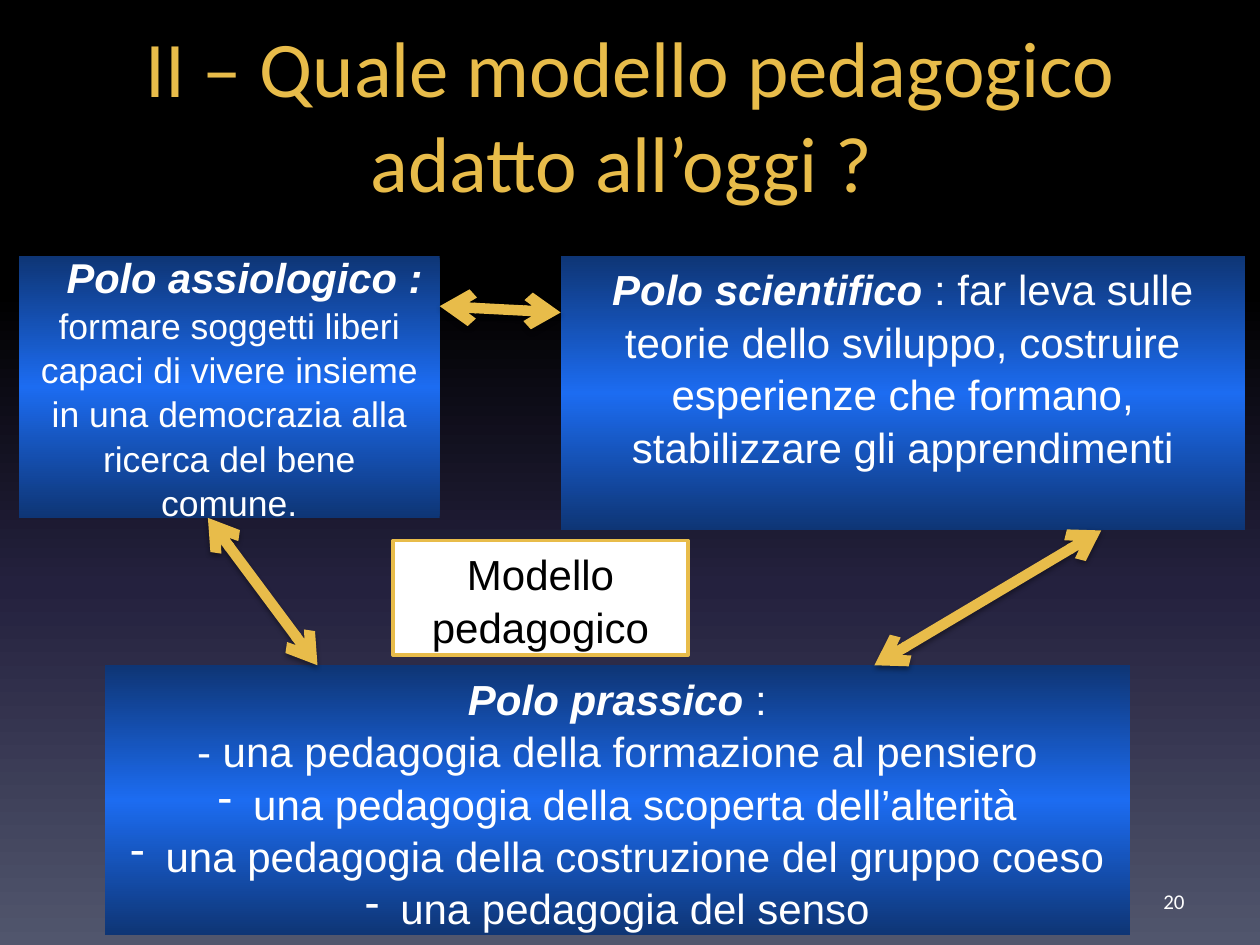
from lxml.etree import SubElement
from pptx import Presentation
from pptx.dml.color import RGBColor
from pptx.enum.shapes import MSO_CONNECTOR as Connector, MSO_SHAPE as Shape
from pptx.enum.text import MSO_ANCHOR as Anchor, MSO_AUTO_SIZE as AutoSize, PP_ALIGN as Align
from pptx.oxml.ns import qn
from pptx.util import Inches, Pt

COLORS = {
    "gold": "E8BC4A", "white": "FFFFFF", "black": "000000",
    "edge": "0E3575", "blue": "1C6CF1", "night": "24213E", "slate": "51566D",
}
POLE_STOPS = [(0, "edge"), (50, "blue"), (100, "edge")]
SKY_STOPS = [(0, "black"), (31, "black"), (62, "night"), (100, "slate")]
LEAD = {"bold": True, "italic": True}


def rgb(name):
    return RGBColor.from_string(COLORS[name])


def add_child(parent, tag, **attributes):
    child = SubElement(parent, qn(tag))
    for key, value in attributes.items():
        child.set(key, str(value))
    return child


def fill_gradient(fill, element, stops):
    fill.gradient()
    fill.gradient_angle = 270
    stop_list = element.xpath(".//a:gsLst")[0]
    for old_stop in list(stop_list):
        stop_list.remove(old_stop)
    for position, name in stops:
        stop = add_child(stop_list, "a:gs", pos=position * 1000)
        add_child(stop, "a:srgbClr", val=COLORS[name])


def add_text(paragraph, text, size=24, font="Arial", color="white", bold=False, italic=False):
    run = paragraph.add_run()
    run.text = text
    run.font.size, run.font.name = Pt(size), font
    run.font.bold, run.font.italic = bold, italic
    run.font.color.rgb = rgb(color)


class SlideBuilder:
    """Holds the grid of tenth-inch cells, the style and the current slide."""

    def __init__(self, presentation, cell=0.1):
        self.cell = cell
        self.slide = presentation.slides.add_slide(presentation.slide_layouts[5])
        fill_gradient(self.slide.background.fill, self.slide.element, SKY_STOPS)

    def grid(self, *cells):
        return [Inches(count * self.cell) for count in cells]

    def set_text(self, shape, paragraphs, anchor=Anchor.TOP, align=Align.CENTER,
                 spacing=1.04, indent=0, **style):
        frame = shape.text_frame
        frame.word_wrap, frame.auto_size = True, AutoSize.NONE
        frame.vertical_anchor = anchor
        for index, runs in enumerate(paragraphs):
            paragraph = frame.add_paragraph() if index else frame.paragraphs[0]
            paragraph.alignment, paragraph.line_spacing = align, spacing
            bulleted = runs[0] == "bullet"
            properties = paragraph._p.get_or_add_pPr()
            if bulleted:
                margin = Inches(0.28)
                properties.set("marL", str(margin))
                properties.set("indent", str(-margin))
                add_child(properties, "a:buChar", char="-")
            elif indent:
                properties.set("indent", str(Inches(indent)))
            for text, changes in runs[1:] if bulleted else runs:
                add_text(paragraph, text, **{**style, **changes})

    def title(self, box, text):
        shape = self.slide.shapes.title
        shape.left, shape.top, shape.width, shape.height = self.grid(*box)
        self.set_text(shape, [[(text, {})]], spacing=1, size=45, font="Calibri", color="gold")

    def number(self, box, text):
        shape = self.slide.shapes.add_textbox(*self.grid(*box))
        self.set_text(shape, [[(text, {})]], anchor=Anchor.MIDDLE, align=Align.RIGHT,
                      spacing=1, size=12, font="Calibri")

    def rectangle(self, box, paragraphs, **style):
        shape = self.slide.shapes.add_shape(Shape.RECTANGLE, *self.grid(*box))
        shape.shadow.inherit = False
        shape.line.fill.background()
        self.set_text(shape, paragraphs, **style)
        return shape

    def pole(self, box, paragraphs, **style):
        shape = self.rectangle(box, paragraphs, **style)
        fill_gradient(shape.fill, shape._element, POLE_STOPS)

    def label(self, box, text):
        shape = self.rectangle(box, [[(text, {})]], color="black")
        shape.fill.solid()
        shape.fill.fore_color.rgb = rgb("white")
        shape.line.color.rgb, shape.line.width = rgb("gold"), Pt(2)

    def double_arrow(self, *ends):
        arrow = self.slide.shapes.add_connector(Connector.STRAIGHT, *self.grid(*ends))
        arrow.line.color.rgb, arrow.line.width = rgb("gold"), Pt(6)
        line = arrow.line._get_or_add_ln()
        for tag in ("a:headEnd", "a:tailEnd"):
            add_child(line, tag, type="arrow")
        effects = add_child(arrow._element.spPr, "a:effectLst")
        shadow = add_child(effects, "a:outerShdw", blurRad=Pt(3.1), dist=Pt(1.6),
                           dir=5400000, rotWithShape=0)
        shade = add_child(shadow, "a:srgbClr", val=COLORS["black"])
        add_child(shade, "a:alpha", val=38000)


def main():
    presentation = Presentation()
    presentation.slide_width, presentation.slide_height = Inches(10), Inches(7.5)
    builder = SlideBuilder(presentation)
    builder.title((5, 1, 90, 12.5), "II – Quale modello pedagogico adatto all’oggi ? ")
    builder.number((71.7, 69.5, 23.3, 4), "20")
    builder.pole((1.5, 20.3, 33.4, 20.8), [[
        ("Polo assiologico : ", {**LEAD, "size": 23.8}),
        ("formare soggetti liberi capaci di vivere insieme in una democrazia "
         "alla ricerca del bene comune.", {"size": 20.3}),
    ]], anchor=Anchor.MIDDLE, indent=0.24)
    practices = ["della scoperta dell’alterità", "della costruzione del gruppo coeso", "del senso"]
    builder.pole((8.3, 52.8, 81.4, 21.4), [
        [("Polo prassico", LEAD), (" :", {})],
        [("- una pedagogia della formazione al pensiero", {})],
        *(["bullet", (f"una pedagogia {practice}", {})] for practice in practices),
    ])
    builder.pole((44.5, 20.3, 54.3, 21.8), [[
        ("Polo scientifico", LEAD),
        (" : far leva sulle teorie dello sviluppo, costruire esperienze che formano, "
         "stabilizzare gli apprendimenti", {}),
    ]])
    builder.label((31.2, 42.9, 23.4, 9.1), "Modello pedagogico")
    for ends in ((16.5, 41.1, 25.2, 52.8), (34.9, 24.3, 44.5, 24.8), (87.4, 42.1, 69.4, 52.8)):
        builder.double_arrow(*ends)
    presentation.save("out.pptx")


if __name__ == "__main__":
    main()
